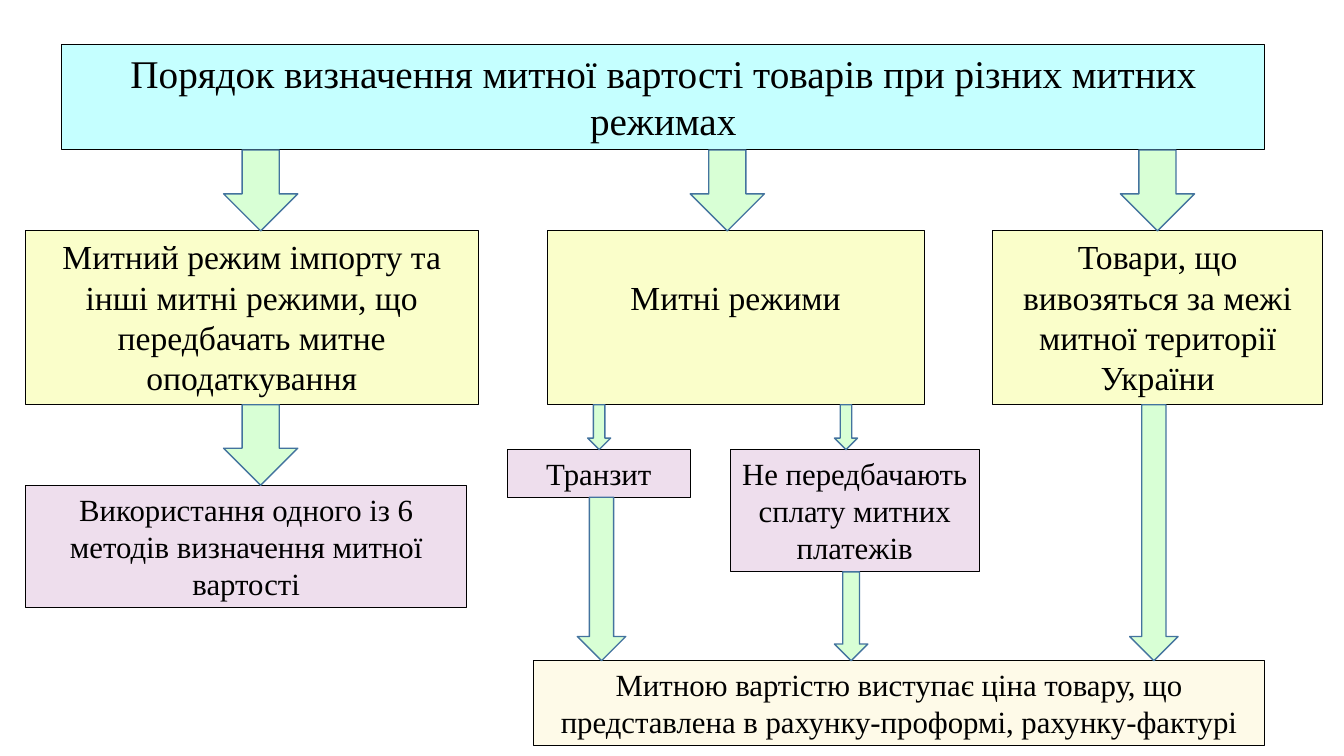
from pptx import Presentation
from pptx.dml.color import RGBColor
from pptx.enum.shapes import MSO_SHAPE
from pptx.enum.text import MSO_ANCHOR, PP_ALIGN
from pptx.util import Cm, Pt

RECTANGLE = MSO_SHAPE.RECTANGLE
DOWN_ARROW = MSO_SHAPE.DOWN_ARROW
TOP = MSO_ANCHOR.TOP
CENTER = PP_ALIGN.CENTER

BLACK = "000000"
CYAN = "C5FFFF"
YELLOW = "FAFECA"
LILAC = "EEDEED"
CREAM = "FEFAE8"
GREEN = "D8FFD5"
BLUE = "43739E"


def color(value):
    return RGBColor.from_string(value)


class Flowchart:
    font_name = "Times New Roman"

    def __init__(self, slide):
        self.slide = slide

    def shape(self, kind, left, top, width, height, fill, line, line_width):
        shape = self.slide.shapes.add_shape(kind, left, top, width, height)
        shape.shadow.inherit = False
        shape.fill.solid()
        shape.fill.fore_color.rgb = color(fill)
        shape.line.color.rgb = color(line)
        shape.line.width = Pt(line_width)
        return shape

    def box(self, text, left, top, width, height, fill, size, inset=0.13):
        """Add a captioned box; lengths and the top inset are in centimetres."""
        box = self.shape(RECTANGLE, Cm(left), Cm(top), Cm(width), Cm(height),
                         fill, BLACK, 0.75)
        frame = box.text_frame
        frame.word_wrap = True
        frame.vertical_anchor = TOP
        frame.margin_top = Cm(inset)
        paragraph = frame.paragraphs[0]
        paragraph.text = text
        paragraph.alignment = CENTER
        paragraph.font.name = self.font_name
        paragraph.font.size = Pt(size)
        paragraph.font.color.rgb = color(BLACK)
        return box

    def arrow(self, source, target, center, width):
        """Fill the gap between two boxes with an arrow centred at a given x."""
        top = source.top + source.height
        self.shape(DOWN_ARROW, Cm(center - width / 2), top, Cm(width),
                   target.top - top, GREEN, BLUE, 1)


def main():
    deck = Presentation()
    deck.slide_width = Cm(33.87)
    deck.slide_height = Cm(19.05)
    page = deck.slides.add_slide(deck.slide_layouts[6])
    chart = Flowchart(page)

    title = chart.box(
        "Порядок визначення митної вартості товарів при різних митних режимах",
        1.56, 1.12, 30.31, 2.66, CYAN, 28)

    regime_top, regime_height = 5.82, 4.38
    imports = chart.box(
        "Митний режим імпорту та інші митні режими, що передбачать митне оподаткування",
        0.64, regime_top, 11.41, regime_height, YELLOW, 24)
    regimes = chart.box("Митні режими", 13.79, regime_top, 9.5, regime_height,
                        YELLOW, 24, inset=1.15)
    exports = chart.box("Товари, що вивозяться за межі митної території України",
                        25.02, regime_top, 8.31, regime_height, YELLOW, 24)

    methods = chart.box("Використання одного із 6 методів визначення митної вартості",
                        0.64, 12.23, 11.13, 3.08, LILAC, 22)
    transit = chart.box("Транзит", 12.78, 11.33, 4.62, 1.2, LILAC, 22)
    untaxed = chart.box("Не передбачають сплату митних платежів",
                        18.4, 11.33, 6.28, 3.08, LILAC, 22)
    invoice_price = chart.box(
        "Митною вартістю виступає ціна товару, що представлена в рахунку-проформі, "
        "рахунку-фактурі",
        13.44, 16.65, 18.43, 2.14, CREAM, 22)

    for source, target, center, width in (
        (title, imports, 6.57, 1.87),
        (title, regimes, 18.33, 1.87),
        (title, exports, 29.17, 1.87),
        (imports, methods, 6.57, 1.87),
        (regimes, transit, 15.1, 0.58),
        (regimes, untaxed, 21.32, 0.58),
        (transit, invoice_price, 15.16, 1.22),
        (untaxed, invoice_price, 21.45, 0.84),
        (exports, invoice_price, 29.08, 1.22),
    ):
        chart.arrow(source, target, center, width)

    deck.save("out.pptx")


if __name__ == "__main__":
    main()
